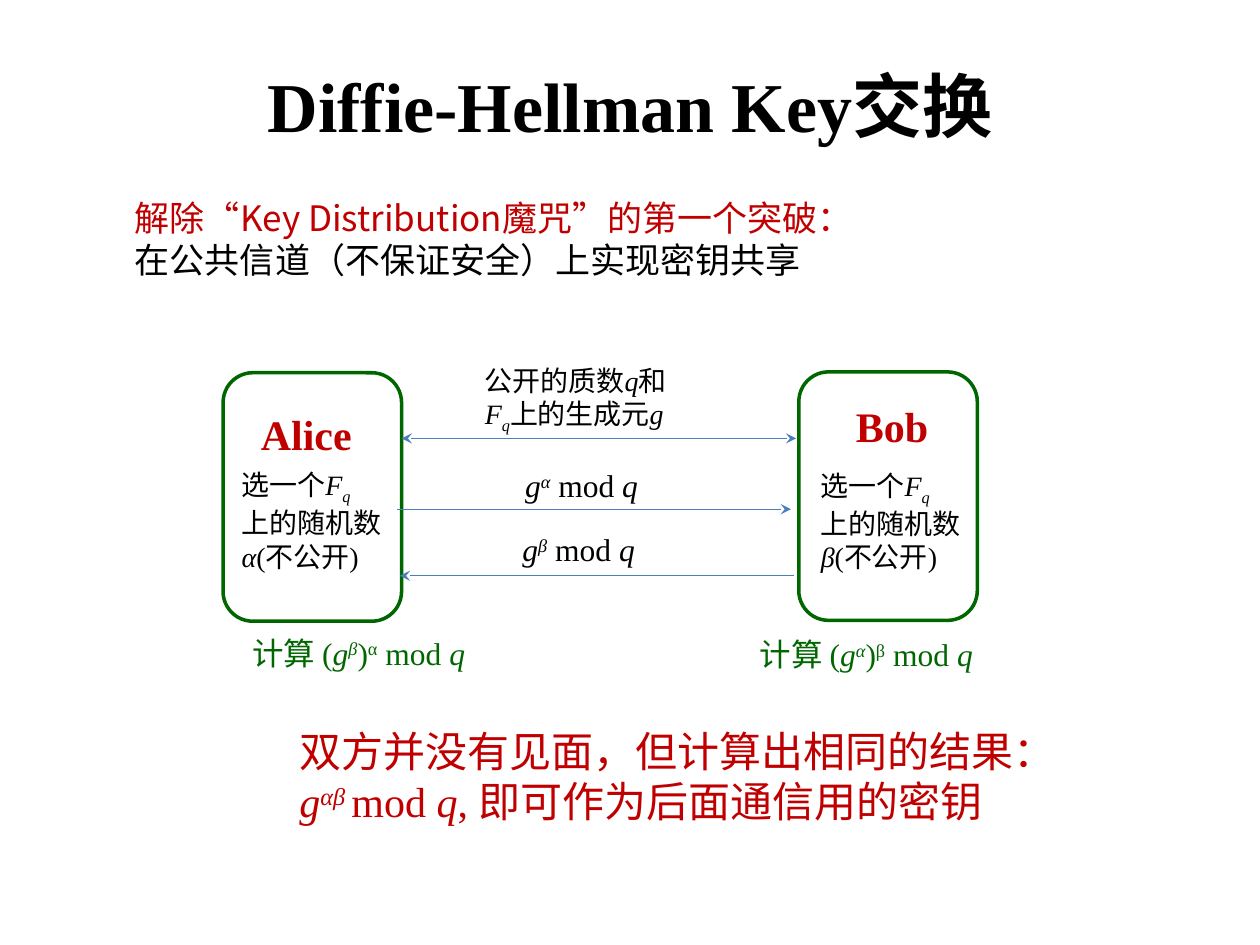
from lxml.etree import SubElement
from pptx import Presentation
from pptx.dml.color import RGBColor
from pptx.enum.shapes import MSO_CONNECTOR, MSO_SHAPE
from pptx.enum.text import MSO_ANCHOR, PP_ALIGN
from pptx.oxml.ns import qn
from pptx.util import Pt

COLORS = {"text": "000000", "red": "C00000", "green": "006600", "arrow": "4B7EBC"}
SERIF, CJK, HEAD_CJK = "Times New Roman", "Noto Sans CJK SC", "Roboto Condensed"
BASELINES = {"^": "30000", "_": "-25000"}
BREAK = ("\n", "")

TITLE = [("Diffie-Hellman Key", ""), ("交换", "")]
INTRO = [
    ("解除“Key Distribution魔咒”的第一个突破：", "red"),
    ("在公共信道（不保证安全）上实现密钥共享", "text"),
]
PUBLIC = [("公开的质数", ""), ("q", "i"), ("和", ""), BREAK,
          ("F", "i"), ("q", "i_"), ("上的生成元", ""), ("g", "i")]
RESULT = [("双方并没有见面，但计算出相同的结果：", ""), BREAK,
          ("g", "i"), ("αβ ", "i^"), ("mod ", ""), ("q", "i"),
          (", 即可作为后面通信用的密钥", "")]
PARTIES = [
    {"name": "Alice", "own": "α", "other": "β", "card": (127.5, 213),
     "label": (142, 230), "secret": (131, 263.5), "result": (137, 358.5)},
    {"name": "Bob", "own": "β", "other": "α", "card": (456.5, 212.5),
     "label": (482, 225.5), "secret": (462, 264), "result": (427, 359.5)},
]
MESSAGES = [("α", 293, 263), ("β", 291.5, 299.5)]
ARROWS = [
    (229.5, 455, 250.5, ("headEnd", "tailEnd")),
    (227, 452, 291, ("tailEnd",)),
    (228.5, 453.5, 329, ("headEnd",)),
]

prs = Presentation()
prs.slide_width, prs.slide_height = Pt(720), Pt(540)
s = prs.slides.add_slide(prs.slide_layouts[6])


def rgb(name):
    return RGBColor.from_string(COLORS[name])


def add_runs(p, runs, size, color, latin=SERIF, cjk=CJK, bold=False):
    p.font.size, p.font.bold, p.font.name = Pt(size), bold, latin
    p.font.color.rgb = rgb(color)
    for text, style in runs:
        if text == "\n":
            p.add_line_break()
            continue
        r = p.add_run()
        r.text = text
        if "i" in style:
            r.font.italic = True
        rPr = r._r.get_or_add_rPr()
        for mark in style.replace("i", ""):
            rPr.set("baseline", BASELINES[mark])
        SubElement(rPr, qn("a:ea")).set("typeface", cjk)


def add_box(x, y, w, h):
    tf = s.shapes.add_textbox(Pt(x), Pt(y), Pt(w), Pt(h)).text_frame
    tf.word_wrap = True
    return tf


def add_text(x, y, w, h, runs, size, color, **fonts):
    tf = add_box(x, y, w, h)
    add_runs(tf.paragraphs[0], runs, size, color, **fonts)
    return tf


def add_arrow(x1, x2, y, ends):
    line = s.shapes.add_connector(MSO_CONNECTOR.STRAIGHT, Pt(x1), Pt(y), Pt(x2), Pt(y))
    line.line.color.rgb = rgb("arrow")
    line.line.width = Pt(0.75)
    ln = line.line._get_or_add_ln()
    for end in ends:
        SubElement(ln, qn(f"a:{end}")).set("type", "stealth")
    SubElement(line._element.spPr, qn("a:effectLst"))


tf = add_text(36, 19.5, 648, 80, TITLE, 40, "text", cjk=HEAD_CJK, bold=True)
tf.vertical_anchor = MSO_ANCHOR.MIDDLE
tf.paragraphs[0].alignment = PP_ALIGN.CENTER
tf.paragraphs[0].runs[-1].font.name = HEAD_CJK

tf = add_box(70, 108.5, 454, 55.5)
for i, (text, color) in enumerate(INTRO):
    p = tf.add_paragraph() if i else tf.paragraphs[0]
    add_runs(p, [(text, "")], 20, color, latin=CJK)

for party in PARTIES:
    x, y = party["card"]
    sp = s.shapes.add_shape(MSO_SHAPE.ROUNDED_RECTANGLE, Pt(x), Pt(y), Pt(102), Pt(142))
    sp.shadow.inherit = False
    sp.fill.background()
    sp.line.color.rgb = rgb("green")
    sp.line.width = Pt(2)
    add_text(*party["label"], 73, 36, [(party["name"], "")], 24, "red", bold=True)
    secret = [("选一个", ""), ("F", "i"), ("q", "i_"), BREAK, ("上的随机数", ""), BREAK,
              (party["own"], "i"), ("(不公开)", "")]
    add_text(*party["secret"], 97, 65.5, secret, 16, "text")
    result = [("计算 (", ""), ("g", "i"), (party["other"], "i^"), (")", ""),
              (party["own"], "^"), (" mod ", ""), ("q", "i")]
    add_text(*party["result"], 156, 29, result, 18, "green")

for arrow in ARROWS:
    add_arrow(*arrow)
for exponent, x, y in MESSAGES:
    message = [("g", "i"), (exponent, "i^"), (" mod ", ""), ("q", "i")]
    add_text(x, y, 96.5, 29, message, 18, "text")

add_text(270, 204, 142, 46, PUBLIC, 16, "text")
add_text(164, 411, 455, 65.5, RESULT, 24, "red")

prs.save("out.pptx")
